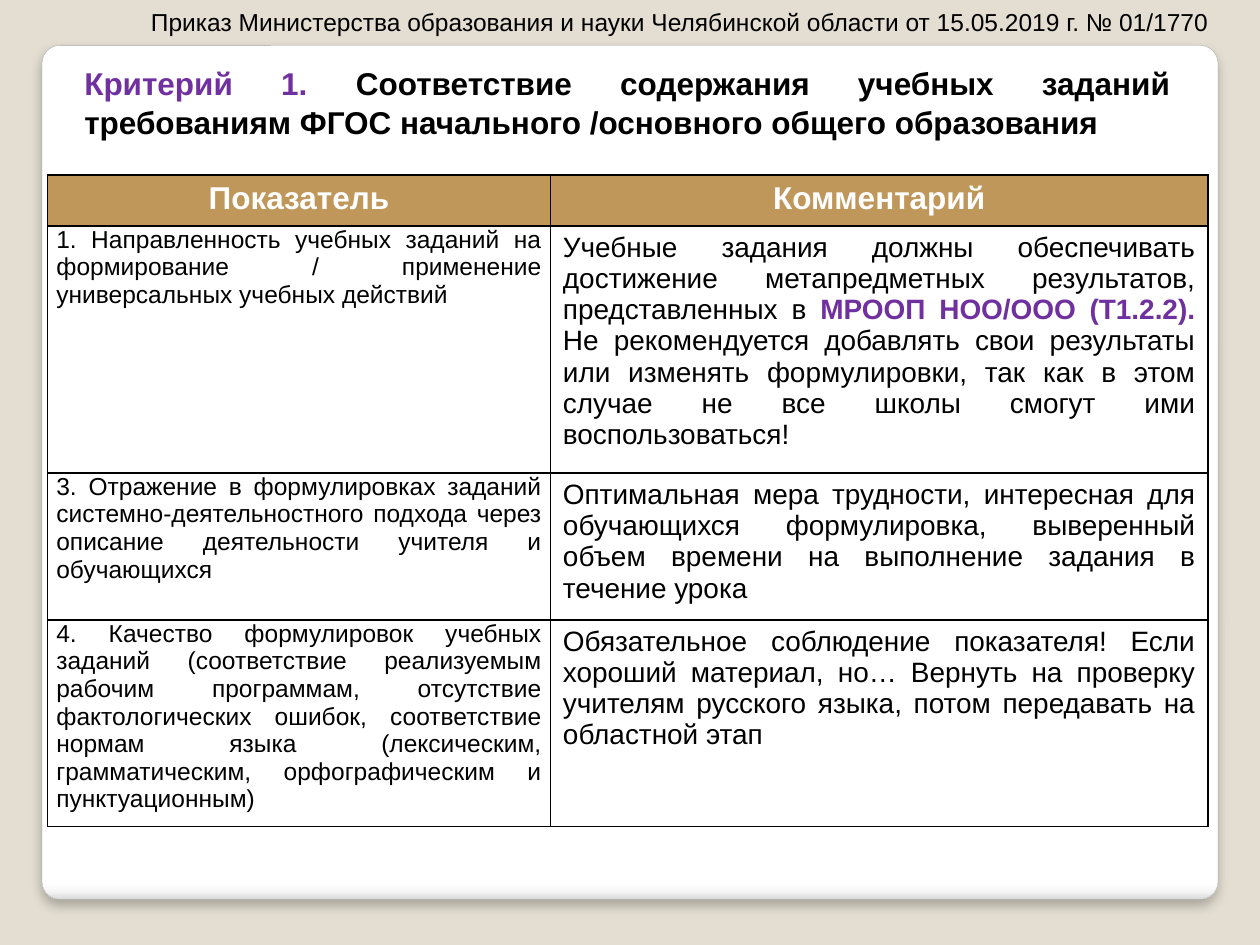
from lxml.etree import SubElement
from pptx import Presentation
from pptx.dml.color import RGBColor
from pptx.enum.shapes import MSO_SHAPE as SHAPE
from pptx.enum.text import MSO_ANCHOR as ANCHOR, PP_ALIGN as ALIGN
from pptx.oxml import parse_xml
from pptx.oxml.ns import nsdecls, qn
from pptx.util import Pt

# Content: each text is a list of (words, colour, bold) runs
BLACK, WHITE, PURPLE, GOLD = "000000", "FFFFFF", "7030A0", "C0975A"
SOURCE = [("Приказ Министерства образования и науки Челябинской области от 15.05.2019 г. № 01/1770", BLACK, False)]
TITLE = [
    ("Критерий 1. ", PURPLE, True),
    ("Соответствие содержания учебных заданий требованиям ФГОС начального /основного общего образования", BLACK, True),
]
HEADER = ["Показатель", "Комментарий"]
ROWS = [
    ("1. Направленность учебных заданий на формирование / применение универсальных учебных действий",
     [("Учебные задания должны обеспечивать достижение метапредметных результатов, представленных в ", BLACK, False),
      ("МРООП НОО/ООО (Т1.2.2). ", PURPLE, True),
      ("Не рекомендуется добавлять свои результаты или изменять формулировки, "
       "так как в этом случае не все школы смогут ими воспользоваться!", BLACK, False)]),
    ("3. Отражение в формулировках заданий системно-деятельностного подхода "
     "через описание деятельности учителя и обучающихся",
     [("Оптимальная мера трудности, интересная для обучающихся формулировка, "
       "выверенный объем времени на выполнение задания в течение урока", BLACK, False)]),
    ("4. Качество формулировок учебных заданий (соответствие реализуемым рабочим программам, "
     "отсутствие фактологических ошибок, соответствие нормам языка "
     "(лексическим, грамматическим, орфографическим и пунктуационным)",
     [("Обязательное соблюдение показателя! Если хороший материал, но… "
       "Вернуть на проверку учителям русского языка, потом передавать на областной этап", BLACK, False)]),
]
COL_WIDTHS = [287.3, 375.8]
ROW_HEIGHTS = [29.2, 141.2, 84, 117.8]
CARD_STOPS = [(0, "FFFFFF"), (98, "FFFFFF"), (99, "F7F7F7"), (100, "DADADA")]


def rgb(value):
    return RGBColor.from_string(value)


def write(tf, runs, size, align):
    tf.word_wrap = True
    p = tf.paragraphs[0]
    p.alignment = align
    for text, color, bold in runs:
        r = p.add_run()
        r.text = text
        r.font.name, r.font.size, r.font.bold = "Arial", Pt(size), bold
        r.font.color.rgb = rgb(color)
    return p


def add_borders(cell):
    tcPr = cell._tc.get_or_add_tcPr()
    for i, side in enumerate(("lnL", "lnR", "lnT", "lnB")):
        ln = parse_xml(f'<a:{side} {nsdecls("a")} w="{Pt(1)}"><a:solidFill>'
                       f'<a:srgbClr val="{BLACK}"/></a:solidFill></a:{side}>')
        tcPr.insert(i, ln)


def fill_cell(cell, runs, size, align, fill):
    write(cell.text_frame, runs, size, align)
    cell.fill.solid()
    cell.fill.fore_color.rgb = rgb(fill)
    add_borders(cell)


prs = Presentation()
prs.slide_width, prs.slide_height = Pt(720), Pt(540)
s = prs.slides.add_slide(prs.slide_layouts[5])
s.background.fill.solid()
s.background.fill.fore_color.rgb = rgb("E3DED1")

# Card behind everything, with gradient and soft shadow
card = s.shapes.add_shape(SHAPE.ROUNDED_RECTANGLE, Pt(24), Pt(26), Pt(672), Pt(488))
card.adjustments[0] = 0.021
card.fill.gradient()
card.fill.gradient_angle = 270
stops = card._element.spPr.find(qn("a:gradFill")).find(qn("a:gsLst"))
for stop in list(stops):
    stops.remove(stop)
for pos, color in CARD_STOPS:
    gs = SubElement(stops, qn("a:gs"), pos=str(pos * 1000))
    SubElement(gs, qn("a:srgbClr"), val=color)
card.line.color.rgb = rgb("A4A4A4")
card.line.width = Pt(0.16)
card._element.spPr.append(parse_xml(
    f'<a:effectLst {nsdecls("a")}><a:outerShdw blurRad="{Pt(6)}" dist="{Pt(4)}" dir="5400000" '
    f'rotWithShape="0"><a:srgbClr val="{BLACK}"><a:alpha val="25000"/></a:srgbClr>'
    '</a:outerShdw></a:effectLst>'))
s.shapes._spTree.insert(2, card._element)

# Title
title = s.shapes.title
title.left, title.top, title.width, title.height = Pt(41), Pt(31.7), Pt(635), Pt(51)
title.text_frame.vertical_anchor = ANCHOR.TOP
write(title.text_frame, TITLE, 18, ALIGN.JUSTIFY).line_spacing = 1.05

# Table of indicators and comments
frame = s.shapes.add_table(len(ROW_HEIGHTS), len(COL_WIDTHS), Pt(27.2), Pt(100),
                           Pt(sum(COL_WIDTHS)), Pt(sum(ROW_HEIGHTS)))
table = frame.table
for col, width in zip(table.columns, COL_WIDTHS):
    col.width = Pt(width)
for row, height in zip(table.rows, ROW_HEIGHTS):
    row.height = Pt(height)
for c, text in enumerate(HEADER):
    fill_cell(table.cell(0, c), [(text, WHITE, True)], 18, ALIGN.CENTER, GOLD)
for i, (indicator, comment) in enumerate(ROWS, start=1):
    cell = table.cell(i, 0)
    cell.margin_left = cell.margin_right = Pt(5)
    cell.margin_top = cell.margin_bottom = Pt(0)
    fill_cell(cell, [(indicator, BLACK, False)], 14, ALIGN.JUSTIFY, WHITE)
    fill_cell(table.cell(i, 1), comment, 16, ALIGN.JUSTIFY, WHITE)

# Source line above the card
box = s.shapes.add_textbox(Pt(79.2), Pt(0.7), Pt(640.8), Pt(24.3))
write(box.text_frame, SOURCE, 14, ALIGN.LEFT)

prs.save("out.pptx")
